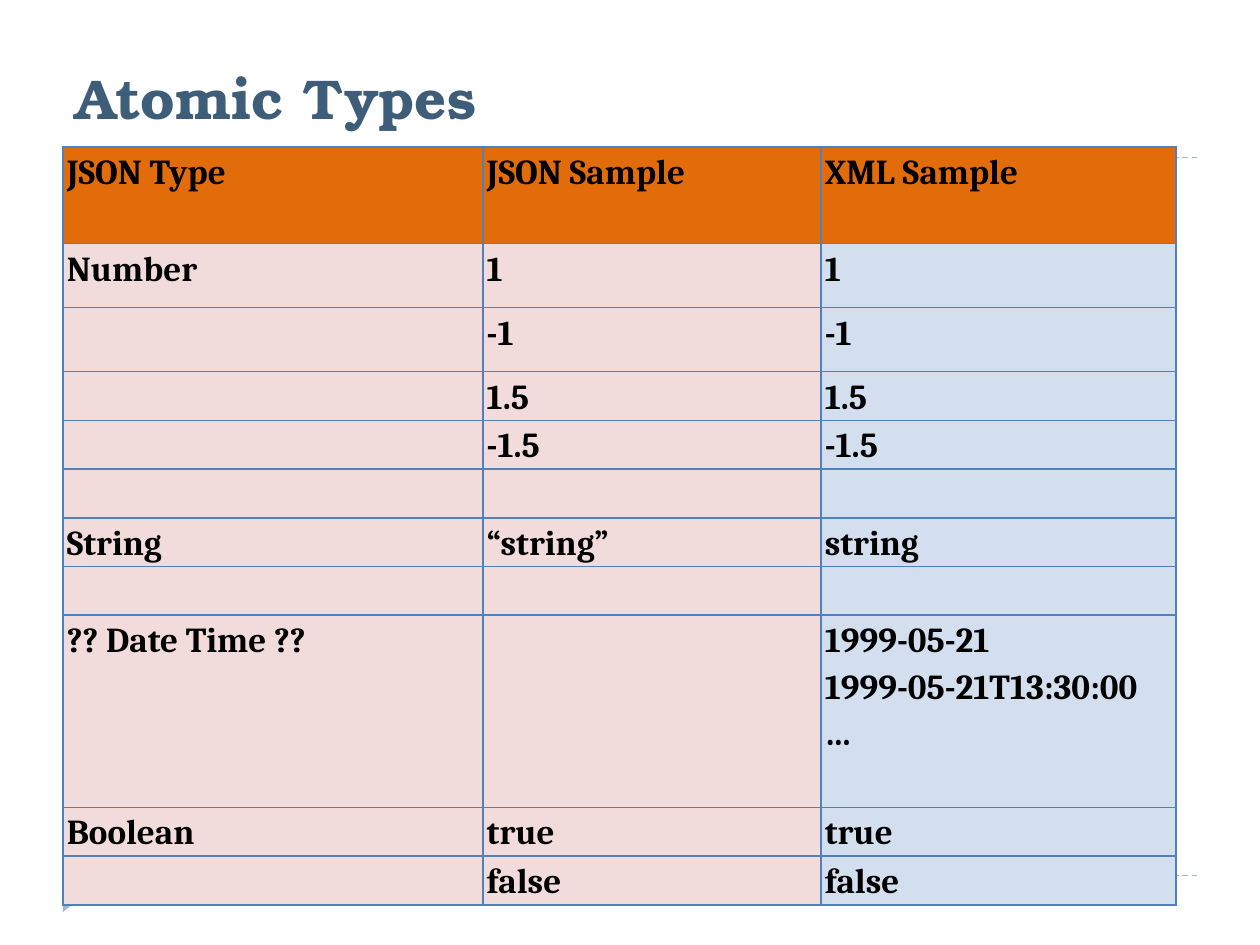
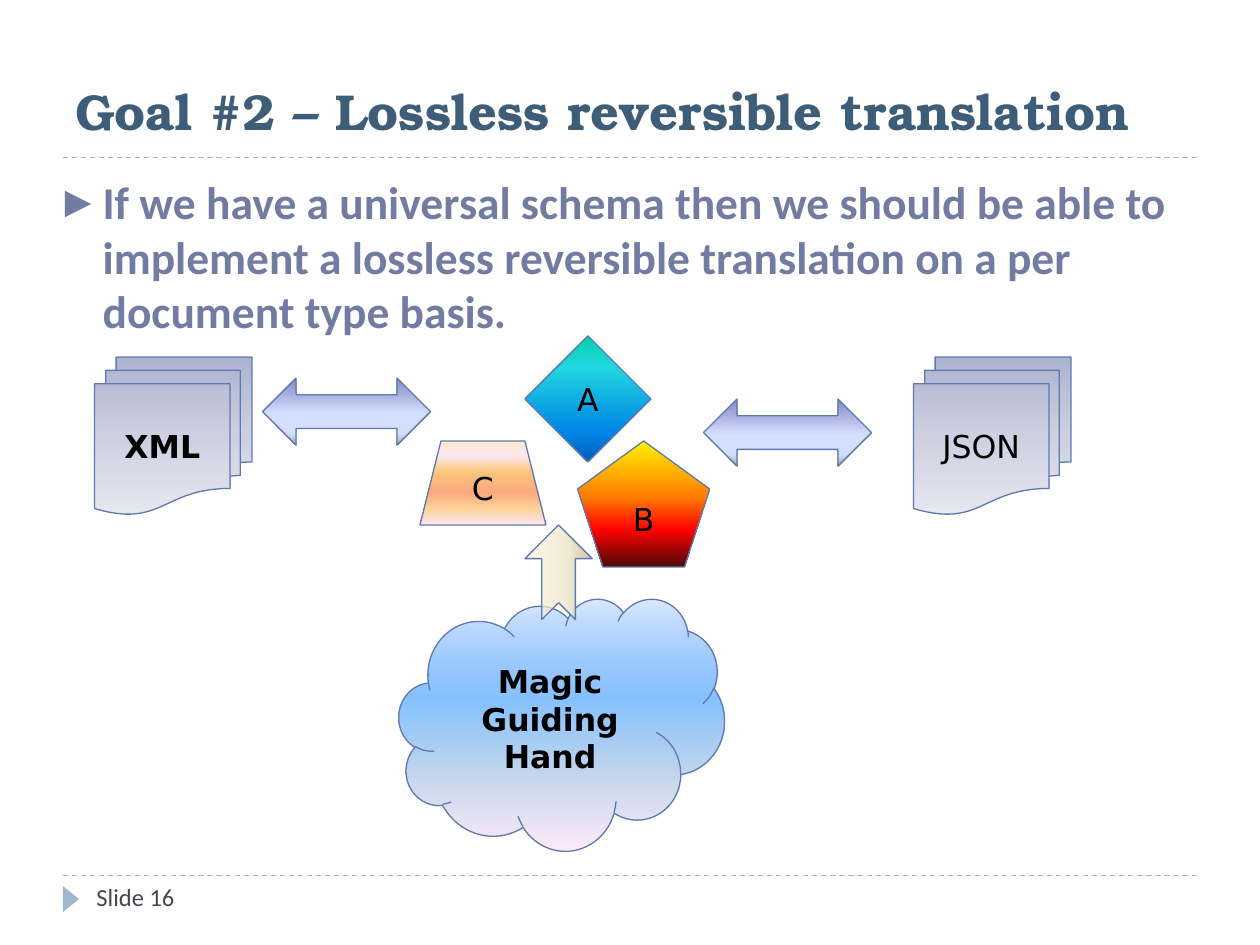
from lxml.etree import SubElement
from pptx import Presentation
from pptx.dml.color import RGBColor
from pptx.enum.dml import MSO_LINE
from pptx.enum.shapes import MSO_CONNECTOR, MSO_SHAPE as SHP
from pptx.enum.text import MSO_ANCHOR as ANC, PP_ALIGN as AL
from pptx.oxml.ns import qn
from pptx.util import Emu, Inches, Pt

COLS, ROWS = 120, 90
W, H = Inches(10), Inches(7.5)
C = dict(title="3E5D78", rule="9FB8CD", footer="464653", body="727CA3",
         ink="000000", outline="5F79B0", border="4F81BD",
         head="E36C0A", json="F2DBDB", xml="D3DFEE")
FONT = dict(title="TeX Gyre Bonum", body="Calibri", table="Cambria",
            shape="DejaVu Sans")
GRAD = dict(
    doc=[(0, "ADB3CF"), (50, "CCD0E0"), (100, "E6E7EF")],
    arrow=[(0, "8488C4"), (53, "D4DEFF"), (83, "D4DEFF"), (100, "96AB94")],
    cloud=[(0, "5E9EFF", 22), (40, "85C2FF"), (70, "C4D6EB"), (100, "FFEBFA")],
    a=[(0, "03D4A8"), (25, "21D6E0"), (75, "0087E6"), (100, "005CBF")],
    b=[(0, "FFF200"), (45, "FF7A00"), (70, "FF0300"), (100, "4D0808")],
    c=[(0, "FBEAC7"), (18, "FEE7F2"), (36, "FAC77D"), (61, "FBA97D"),
       (82, "FBD49C"), (100, "FEE7F2")],
    hand=[(0, "FFEFD1", 37), (65, "F0EBD5"), (100, "D1C39F")])

SLIDE_BOX = (0, 0, COLS, ROWS)
TITLE_BOX = (6, 2, 108, 12)
TABLE_BOX = (6, 14, 106, 72.2)
BODY_BOX = (5, 16, 109, 17)
DIAGRAM_BOX = (9, 32, 93, 49)
NUMBER_BOX = (8, 83.4, 26, 4.8)

COL_W = [40, 32.2, 33.8]
ROW_H = [9.2, 6.1, 6.1] + [4.64] * 5 + [18.3] + [4.64] * 2
TYPES = [
    ("JSON Type", "JSON Sample", "XML Sample"),
    ("Number", "1", "1"),
    ("", "-1", "-1"),
    ("", "1.5", "1.5"),
    ("", "-1.5", "-1.5"),
    ("", "", ""),
    ("String", "“string”", "string"),
    ("", "", ""),
    ("?? Date Time ??", "", "1999-05-21\n1999-05-21T13:30:00\n…"),
    ("Boolean", "true", "true"),
    ("", "false", "false"),
]


def gx(n):
    return Emu(round(W * n / COLS))


def gy(n):
    return Emu(round(H * n / ROWS))


def place(box, x, y, w, h):
    return gx(box[0] + x), gy(box[1] + y), gx(w), gy(h)


def rgb(name):
    return RGBColor.from_string(C[name])


def apply(obj, fmt):
    for key, val in fmt.items():
        setattr(obj, key, val)


def write(p, text, color, **fmt):
    r = p.add_run()
    r.text = text
    apply(r.font, fmt)
    r.font.color.rgb = rgb(color)


def add_text(s, at, text, color, anchor=ANC.TOP, **fmt):
    tf = s.shapes.add_textbox(*at).text_frame
    apply(tf, dict(word_wrap=True, vertical_anchor=anchor))
    write(tf.paragraphs[0], text, color, **fmt)
    return tf.paragraphs[0]


def shade(sp, stops):
    sp.fill.gradient()
    grad = sp.element.spPr.find(qn("a:gradFill"))
    for child in list(grad):
        grad.remove(child)
    grad.set("rotWithShape", "1")
    gs_list = SubElement(grad, qn("a:gsLst"))
    for pos, color, *alpha in stops:
        gs = SubElement(gs_list, qn("a:gs"), pos=str(pos * 1000))
        clr = SubElement(gs, qn("a:srgbClr"), val=color)
        for val in alpha:
            SubElement(clr, qn("a:alpha"), val=str(val * 1000))
    SubElement(grad, qn("a:lin"), ang="5400000", scaled="0")


def add_frame(s, box):
    x, _, w, _ = box
    for y in (83.4, 15):
        ln = s.shapes.add_connector(MSO_CONNECTOR.STRAIGHT, gx(x + 6), gy(y),
                                    gx(x + w - 6), gy(y))
        apply(ln.line, dict(width=Pt(0.75), dash_style=MSO_LINE.DASH))
        ln.line.color.rgb = rgb("rule")
        SubElement(ln.element.spPr, qn("a:effectLst"))
    sp = s.shapes.add_shape(SHP.ISOSCELES_TRIANGLE,
                            *place(box, 5.5, 84.85, 2.5, 1.55))
    sp.rotation = 90
    sp.shadow.inherit = False
    sp.fill.solid()
    sp.fill.fore_color.rgb = rgb("rule")
    sp.line.fill.background()


def add_number(s, box, text):
    add_text(s, place(box, 0, 0, *box[2:]), text, "footer",
             size=Pt(14), name=FONT["body"])


def add_title(s, box, text, size, height):
    add_text(s, place(box, 0, 0, box[2], height), text, "title", ANC.BOTTOM,
             size=Pt(size), name=FONT["title"], bold=True)


def fill_cell(cell, text, color):
    apply(cell, dict(margin_left=Inches(0.03), margin_right=Inches(0.03),
                     margin_top=0, margin_bottom=0))
    tc_pr = cell._tc.get_or_add_tcPr()
    for side in "LRTB":
        ln = SubElement(tc_pr, qn(f"a:ln{side}"), w=str(Pt(1)))
        fill = SubElement(ln, qn("a:solidFill"))
        SubElement(fill, qn("a:srgbClr"), val=C["border"])
    cell.fill.solid()
    cell.fill.fore_color.rgb = rgb(color)
    if not text:
        return
    tf = cell.text_frame
    for i, line in enumerate(text.split("\n")):
        p = tf.add_paragraph() if i else tf.paragraphs[0]
        p.line_spacing = 1.15
        write(p, line, "ink", size=Pt(20), name=FONT["table"], bold=True)


def add_types_table(s, box):
    tbl = s.shapes.add_table(len(ROW_H), len(COL_W),
                             *place(box, 0, 0, *box[2:])).table
    apply(tbl, dict(first_row=False, horz_banding=False))
    for col, w in zip(tbl.columns, COL_W):
        col.width = gx(w)
    for i, (row, h) in enumerate(zip(tbl.rows, ROW_H)):
        row.height = gy(h)
        colors = ("json", "json", "xml") if i else ("head",) * 3
        for cell, text, color in zip(row.cells, TYPES[i], colors):
            fill_cell(cell, text, color)


def add_body(s, box, text):
    p = add_text(s, place(box, 0, 0, *box[2:]), text, "body",
                 size=Pt(26), name=FONT["body"], bold=True)
    p.space_before = Pt(6)
    ppr = p._p.get_or_add_pPr()
    ppr.set("marL", str(Inches(0.3)))
    ppr.set("indent", str(-Inches(0.3)))
    clr = SubElement(ppr, qn("a:buClr"))
    SubElement(clr, qn("a:srgbClr"), val=C["body"])
    SubElement(ppr, qn("a:buSzPct"), val="76000")
    SubElement(ppr, qn("a:buFont"), typeface=FONT["shape"])
    SubElement(ppr, qn("a:buChar"), char="▶")


def add_diagram(s, box):
    parts = [
        (SHP.FLOWCHART_MULTIDOCUMENT, (0, 2, 15, 15), "doc", "XML", True, 0),
        (SHP.FLOWCHART_MULTIDOCUMENT, (78, 2, 15, 15), "doc", "JSON", False, 0),
        (SHP.LEFT_RIGHT_ARROW, (16, 4, 16, 6.4), "arrow", "", False, 0),
        (SHP.CLOUD, (29, 25, 31, 24), "cloud", "Magic Guiding Hand", True, 0),
        (SHP.DIAMOND, (41, 0, 12, 12), "a", "A", False, 0),
        (SHP.REGULAR_PENTAGON, (46, 10, 12.6, 12), "b", "B", False, 0),
        (SHP.TRAPEZOID, (31, 10, 12, 8), "c", "C", False, 0),
        (SHP.LEFT_RIGHT_ARROW, (58, 6, 16, 6.4), "arrow", "", False, 0),
        (SHP.NOTCHED_RIGHT_ARROW, (39.7, 19.3, 9, 6.4), "hand", "", False, 270),
    ]
    for kind, at, grad, text, bold, turn in parts:
        sp = s.shapes.add_shape(kind, *place(box, *at))
        sp.rotation = turn
        sp.shadow.inherit = False
        shade(sp, GRAD[grad])
        sp.line.width = Pt(0.75)
        sp.line.color.rgb = rgb("outline")
        if text:
            sp.text_frame.vertical_anchor = ANC.MIDDLE
            p = sp.text_frame.paragraphs[0]
            p.alignment = AL.CENTER
            before = SubElement(p._p.get_or_add_pPr(), qn("a:spcBef"))
            SubElement(before, qn("a:spcPct"), val="50000")
            write(p, text, "ink", size=Pt(18), name=FONT["shape"], bold=bold)


def types_slide(s):
    add_frame(s, SLIDE_BOX)
    add_title(s, TITLE_BOX, "Atomic Types", 32, 11)
    add_types_table(s, TABLE_BOX)


def goal_slide(s):
    add_frame(s, SLIDE_BOX)
    add_title(s, TITLE_BOX, "Goal #2 – Lossless reversible translation", 28.8, 12)
    add_number(s, NUMBER_BOX, "Slide 16")
    add_body(s, BODY_BOX, "If we have a universal schema then we should be able to "
             "implement a lossless reversible translation on a per document type basis.")
    add_diagram(s, DIAGRAM_BOX)


def main():
    prs = Presentation()
    apply(prs, dict(slide_width=W, slide_height=H))
    for build in (types_slide, goal_slide):
        build(prs.slides.add_slide(prs.slide_layouts[6]))
    prs.save("out.pptx")


if __name__ == "__main__":
    main()
